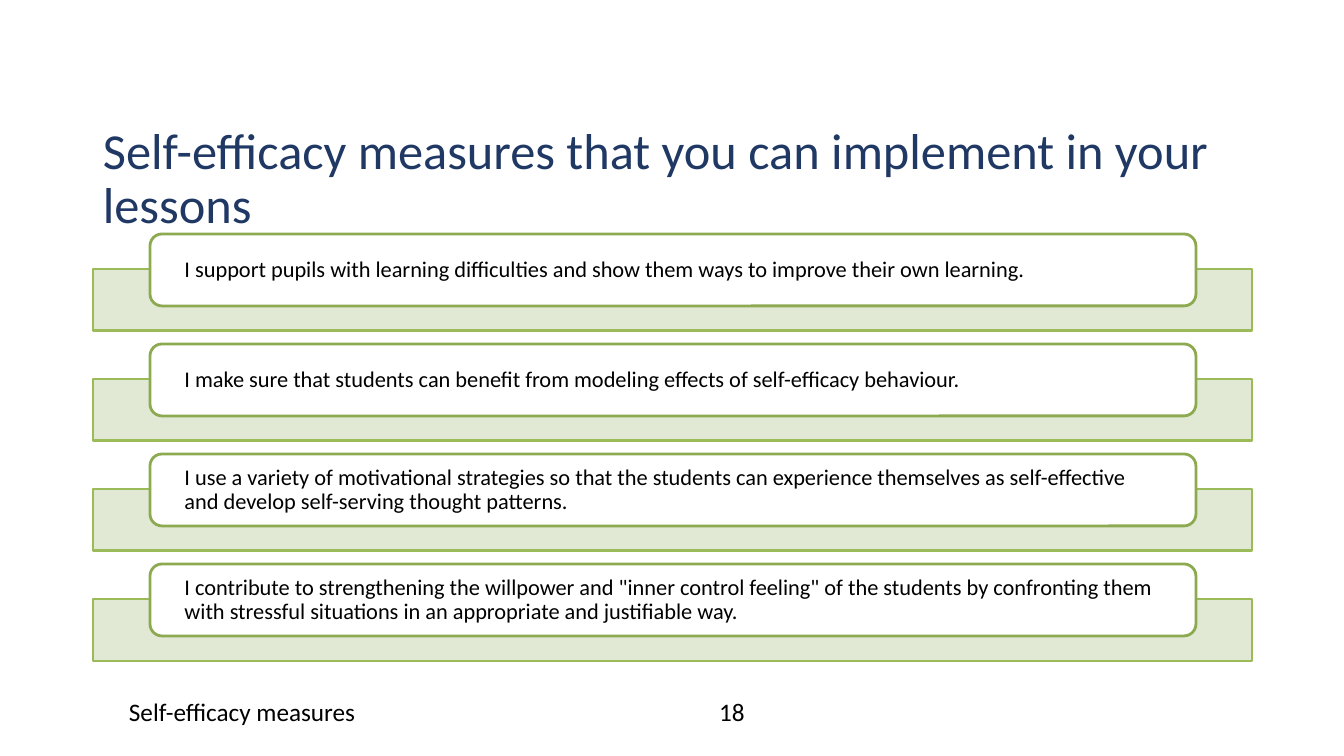
import pptx
import pptx.dml.color
import pptx.enum.shapes
import pptx.enum.text
import pptx.oxml
import pptx.oxml.ns
import pptx.util

SHAPES = pptx.enum.shapes.MSO_SHAPE
ANCHOR = pptx.enum.text.MSO_ANCHOR
ALIGN = pptx.enum.text.PP_ALIGN

MEASURES = [
    "I support pupils with learning difficulties and show them ways to improve their own learning.",
    "I make sure that students can benefit from modeling effects of self-efficacy behaviour.",
    "I use a variety of motivational strategies so that the students can experience themselves as self-effective and develop self-serving thought patterns.",
    "I contribute to strengthening the willpower and \"inner control feeling\" of the students by confronting them with stressful situations in an appropriate and justifiable way.",
]
ROW_PITCH = 110


def px(length):
    return pptx.util.Emu(round(length * 914400 / 100.8))


def color(value):
    return pptx.dml.color.RGBColor.from_string(value)


class SlideBuilder:
    font_name = "Calibri"
    black = "000000"
    navy = "203864"
    white = "FFFFFF"
    pale_green = "DEE7D1"
    bar_green = "9BBB59"
    card_green = "8DAA51"

    def __init__(self, slide):
        self.slide = slide

    def set_text(self, text_frame, text, size, text_color, align=ALIGN.LEFT, spacing=1.0):
        text_frame.text = text
        text_frame.word_wrap = True
        paragraph = text_frame.paragraphs[0]
        paragraph.alignment = align
        paragraph.line_spacing = spacing
        font = paragraph.runs[0].font
        font.name = self.font_name
        font.size = pptx.util.Pt(size)
        font.color.rgb = color(text_color)

    def text(self, box, text, size, text_color, **style):
        shape = self.slide.shapes.add_textbox(*map(px, box))
        self.set_text(shape.text_frame, text, size, text_color, **style)

    def outlined(self, kind, box, fill, line):
        shape = self.slide.shapes.add_shape(kind, *map(px, box))
        shape.shadow.inherit = False
        shape.fill.solid()
        shape.fill.fore_color.rgb = color(fill)
        shape.line.color.rgb = color(line)
        shape.line.width = pptx.util.Pt(2)
        return shape

    def bar(self, box):
        shape = self.outlined(SHAPES.RECTANGLE, box, self.pale_green, self.bar_green)
        solid_fill = shape.element.spPr.find(pptx.oxml.ns.qn("a:solidFill"))
        alpha = pptx.oxml.parse_xml(
            f'<a:alpha {pptx.oxml.ns.nsdecls("a")} val="90000"/>')
        solid_fill[0].append(alpha)

    def card(self, box, text):
        shape = self.outlined(SHAPES.ROUNDED_RECTANGLE, box, self.white, self.card_green)
        text_frame = shape.text_frame
        text_frame.margin_left = text_frame.margin_right = px(31)
        text_frame.margin_top = text_frame.margin_bottom = 0
        text_frame.vertical_anchor = ANCHOR.MIDDLE
        self.set_text(text_frame, text, 16, self.black, spacing=0.9)


def main():
    presentation = pptx.Presentation()
    presentation.slide_width = px(1344)
    presentation.slide_height = px(756)
    builder = SlideBuilder(presentation.slides.add_slide(presentation.slide_layouts[6]))

    builder.text((93, 121, 1159, 98),
                 "Self-efficacy measures that you can implement in your lessons",
                 36, builder.navy, spacing=0.9)
    for row, measure in enumerate(MEASURES):
        offset = row * ROW_PITCH
        builder.bar((93, 269 + offset, 1159, 62))
        builder.card((150, 234 + offset, 1046, 72), measure)
    builder.text((119, 691, 488, 40), "Self-efficacy measures", 18, builder.black)
    builder.text((581, 691, 302, 40), "18", 18, builder.black, align=ALIGN.CENTER)

    presentation.save("out.pptx")


if __name__ == "__main__":
    main()
